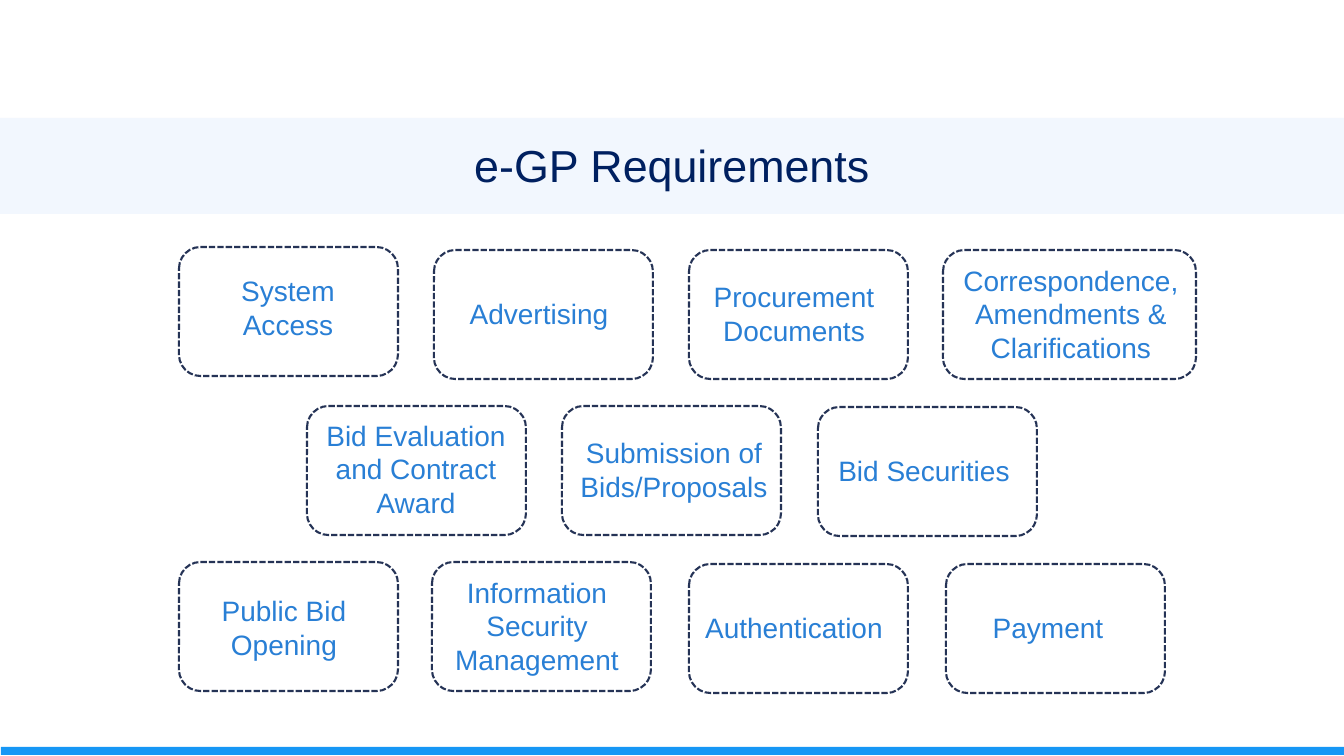
from dataclasses import dataclass

from lxml import etree
from pptx import Presentation
from pptx import util as u
from pptx.dml.color import RGBColor
from pptx.enum import dml, shapes, text
from pptx.oxml.ns import qn

EMU_PER_PX = 914400 / 100.8


@dataclass(frozen=True)
class Theme:
    font: str = "Arial"
    title_size: int = 32
    label_size: int = 20
    outline_width: float = 1.5
    title: str = "002060"
    label: str = "297FD5"
    outline: str = "253356"
    band: str = "ACCBF9"
    footer: str = "1697F5"


@dataclass(frozen=True)
class Requirement:
    label: str
    nudge: tuple = (0, 0)  # card offset from its grid place
    inset: tuple = (1, 13)  # label offset from its card
    extra_width: int = 0


THEME = Theme()

# Card grid
COLUMN_PITCH, ROW_PITCH, TOP = 255, 157, 250
CARD_WIDTH, CARD_HEIGHT = 219, 129
LABEL_WIDTH, LABEL_HEIGHT = 208, 101

# Each row: left edge and its requirements
ROWS = [
    (179, [
        Requirement("System Access", (0, -3), (5, 10)),
        Requirement("Advertising"),
        Requirement("Procurement Documents"),
        Requirement("Correspondence, Amendments & Clarifications",
                    (-1, 0), extra_width=34),
    ]),
    (307, [
        Requirement("Bid Evaluation and Contract Award", (0, -1), (5, 12)),
        Requirement("Submission of Bids/Proposals", (0, -1), (8, 13)),
        Requirement("Bid Securities", (1, 0), (2, 13)),
    ]),
    (179, [
        Requirement("Public Bid Opening", (0, -2), (1, 15)),
        Requirement("Information Security Management", (-2, -2)),
        Requirement("Authentication"),
        Requirement("Payment", (2, 0), (-2, 13)),
    ]),
]


def px(*lengths):
    return [u.Emu(round(length * EMU_PER_PX)) for length in lengths]


def add_bar(parent, box, color, opacity=100):
    bar = parent.add_shape(shapes.MSO_SHAPE.RECTANGLE, *px(*box))
    bar.shadow.inherit = False
    bar.line.fill.background()
    bar.fill.solid()
    bar.fill.fore_color.rgb = RGBColor.from_string(color)
    if opacity < 100:
        tint = bar._element.spPr.find(qn("a:solidFill"))[0]
        etree.SubElement(tint, qn("a:alpha"), val=str(opacity * 1000))


def add_text(parent, box, wording, *, size, color):
    frame = parent.add_textbox(*px(*box)).text_frame
    frame.word_wrap = True
    frame.vertical_anchor = text.MSO_ANCHOR.MIDDLE
    paragraph = frame.paragraphs[0]
    paragraph.alignment = text.PP_ALIGN.CENTER
    run = paragraph.add_run()
    run.text = wording
    run.font.name = THEME.font
    run.font.size = u.Pt(size)
    run.font.color.rgb = RGBColor.from_string(color)


def add_card(parent, left, top, requirement):
    card = parent.add_group_shape().shapes
    extra = requirement.extra_width
    border = card.add_shape(
        shapes.MSO_SHAPE.ROUNDED_RECTANGLE,
        *px(left, top, CARD_WIDTH + extra, CARD_HEIGHT))
    border.shadow.inherit = False
    border.fill.background()
    border.line.color.rgb = RGBColor.from_string(THEME.outline)
    border.line.width = u.Pt(THEME.outline_width)
    border.line.dash_style = dml.MSO_LINE.SQUARE_DOT

    dx, dy = requirement.inset
    # The wide card's label grows by the full extra plus its side margins
    label_width = LABEL_WIDTH + (extra + 12 if extra else 0)
    add_text(card, (left + dx, top + dy, label_width, LABEL_HEIGHT),
             requirement.label, size=THEME.label_size, color=THEME.label)


def main():
    deck = Presentation()
    deck.slide_width, deck.slide_height = px(1344, 756)
    canvas = deck.slides.add_slide(deck.slide_layouts[6]).shapes

    # Footer bar and title band
    add_bar(canvas, (1, 747, 1343, 8), THEME.footer)
    add_bar(canvas, (0, 118, 1344, 96), THEME.band, opacity=15)
    add_text(canvas, (101, 136, 1142, 58), "e-GP Requirements",
             size=THEME.title_size, color=THEME.title)

    # Requirement cards
    for row, (row_left, requirements) in enumerate(ROWS):
        for column, requirement in enumerate(requirements):
            dx, dy = requirement.nudge
            add_card(canvas, row_left + column * COLUMN_PITCH + dx,
                     TOP + row * ROW_PITCH + dy, requirement)

    deck.save("out.pptx")


if __name__ == "__main__":
    main()
